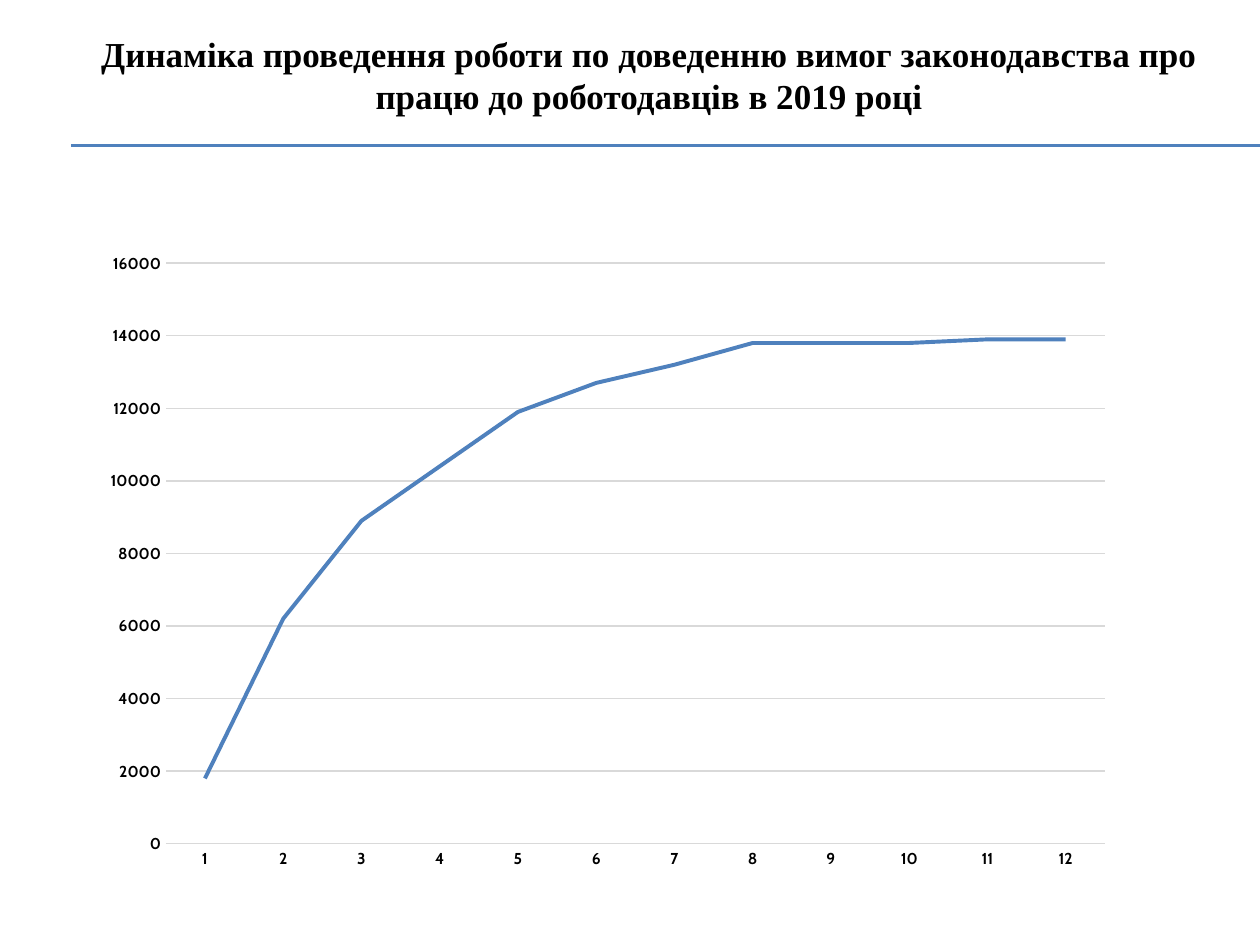
from lxml import etree
from pptx import Presentation
from pptx.chart.data import CategoryChartData
from pptx.dml.color import RGBColor
from pptx.enum.chart import XL_CHART_TYPE, XL_MARKER_STYLE, XL_TICK_MARK
from pptx.enum.shapes import MSO_CONNECTOR
from pptx.enum.text import MSO_ANCHOR, MSO_AUTO_SIZE, PP_ALIGN
from pptx.oxml.ns import qn
from pptx.util import Emu, Pt

LINE_CHART = XL_CHART_TYPE.LINE
NO_MARKER = XL_MARKER_STYLE.NONE
NO_TICK = XL_TICK_MARK.NONE
STRAIGHT = MSO_CONNECTOR.STRAIGHT
MIDDLE = MSO_ANCHOR.MIDDLE
FIXED_SIZE = MSO_AUTO_SIZE.NONE
CENTER = PP_ALIGN.CENTER

# Content
HEADING = ("Динаміка проведення роботи по доведенню вимог законодавства про "
           "працю до роботодавців в 2019 році")
MONTHLY_TOTALS = [1800, 6200, 8900, 10400, 11900, 12700,
                  13200, 13800, 13800, 13800, 13900, 13900]
BLUE, GRAY, BLACK = "4F81BD", "D9D9D9", "000000"

# Layout in px
SLIDE_SIZE = (1260, 945)
HEADING_BOX = (74, 26, 1150, 97)
CHART_BOX = (54, 175, 1118, 735)
RULE_LEFT, RULE_YS = 71, (145, 146)
PLOT_AREA = {"x": 0.1, "y": 0.12, "w": 0.84, "h": 0.79}


def px(length):
    return Emu(round(length * 914400 / 126))


def color(hex_string):
    return RGBColor.from_string(hex_string)


def style_font(font, size, face, hex_color=BLACK, bold=True):
    font.size, font.name, font.bold = Pt(size), face, bold
    font.color.rgb = color(hex_color)


def style_line(line, hex_color, width=0.75):
    line.color.rgb = color(hex_color)
    line.width = Pt(width)


def write_text(frame, text, size, face, align=CENTER):
    frame.text = text
    frame.word_wrap = True
    frame.auto_size = FIXED_SIZE
    frame.vertical_anchor = MIDDLE
    paragraph = frame.paragraphs[0]
    paragraph.alignment = align
    style_font(paragraph.runs[0].font, size, face)


def set_plot_layout(chart, fractions):
    plot_area = chart._chartSpace.chart.plotArea
    for old in plot_area.findall(qn("c:layout")):
        plot_area.remove(old)
    layout = etree.Element(qn("c:layout"))
    manual = etree.SubElement(layout, qn("c:manualLayout"))
    settings = {"layoutTarget": "inner", "xMode": "edge", "yMode": "edge", **fractions}
    for tag, value in settings.items():
        etree.SubElement(manual, qn(f"c:{tag}")).set("val", str(value))
    plot_area.insert(0, layout)


prs = Presentation()
prs.slide_width, prs.slide_height = map(px, SLIDE_SIZE)
slide = prs.slides.add_slide(prs.slide_layouts[5])

# Double rule under the heading
for y in RULE_YS:
    rule = slide.shapes.add_connector(STRAIGHT, px(RULE_LEFT), px(y), px(SLIDE_SIZE[0]), px(y))
    style_line(rule.line, BLUE)
    etree.SubElement(rule._element.spPr, qn("a:effectLst"))

# Heading
heading = slide.shapes.title
heading.left, heading.top, heading.width, heading.height = map(px, HEADING_BOX)
write_text(heading.text_frame, HEADING, 20, "Times New Roman")

# Chart
totals = CategoryChartData()
totals.categories = [str(month) for month in range(1, len(MONTHLY_TOTALS) + 1)]
totals.add_series("Series 1", MONTHLY_TOTALS)
chart = slide.shapes.add_chart(LINE_CHART, *map(px, CHART_BOX), totals).chart
chart.has_legend = chart.has_title = False
style_font(chart.font, 10, "Cabin", bold=False)
set_plot_layout(chart, PLOT_AREA)
chart.plots[0].vary_by_categories = False

# Series line
trend = chart.plots[0].series[0]
trend.smooth = False
trend.marker.style = NO_MARKER
style_line(trend.format.line, BLUE, 2.25)

# Axes
months, amounts = chart.category_axis, chart.value_axis
for axis in (months, amounts):
    axis.major_tick_mark = axis.minor_tick_mark = NO_TICK
    style_font(axis.tick_labels.font, 9, "Cabin")
style_line(months.format.line, GRAY)
amounts.format.line.fill.background()
amounts.minimum_scale, amounts.maximum_scale, amounts.major_unit = 0, 16000, 2000
amounts.has_major_gridlines = True
style_line(amounts.major_gridlines.format.line, GRAY)

prs.save("out.pptx")
